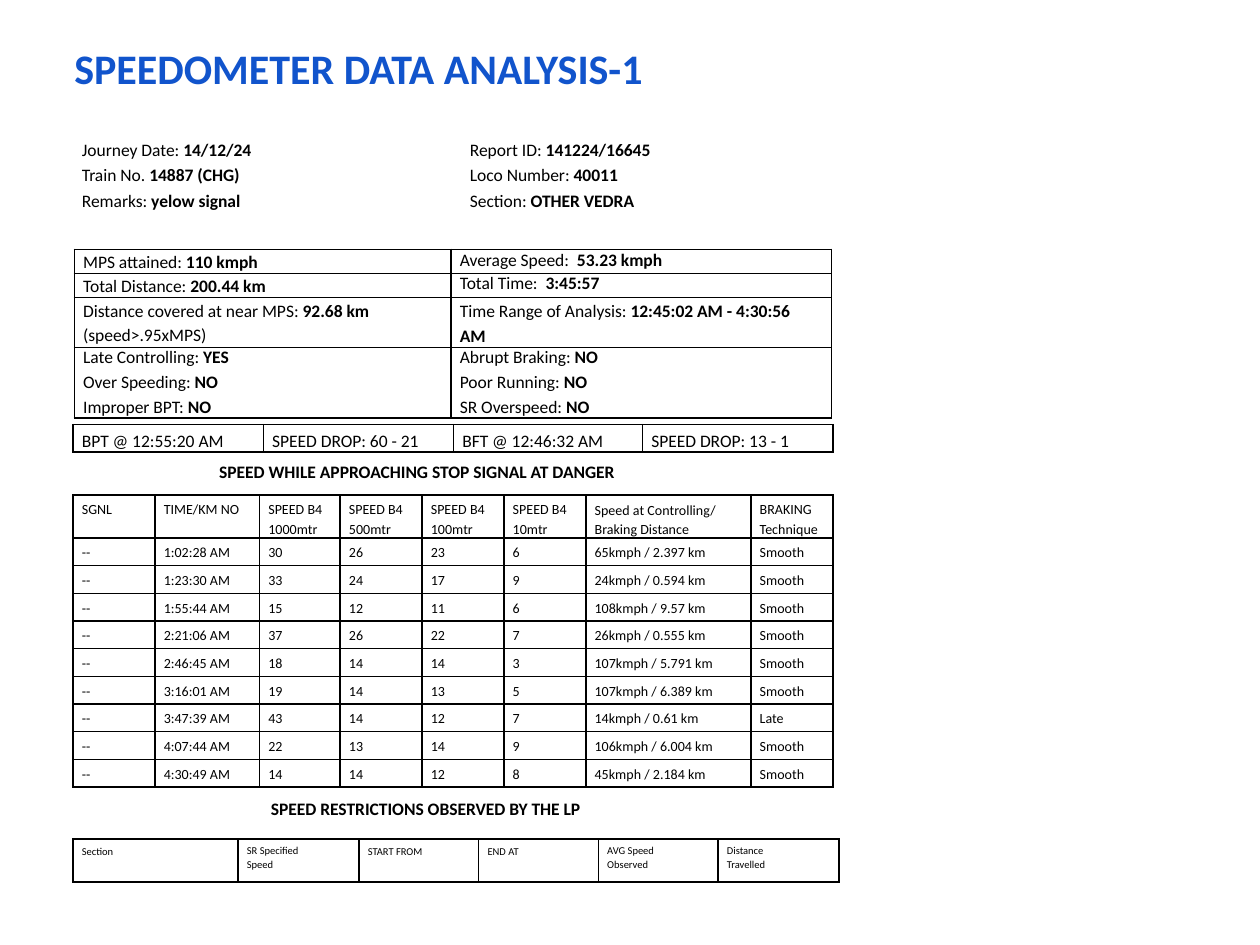
"""Build the speedometer data analysis slide on a grid of 1000 columns by 750 rows."""
from dataclasses import dataclass

import lxml.etree
import pptx
import pptx.dml.color
import pptx.enum.text
import pptx.oxml.ns
import pptx.util

FONT = "Calibri"
BLACK = "000000"
BLUE = "1154CC"
GRID = pptx.util.Inches(10) // 1000


@dataclass(frozen=True)
class Box:
    """A rectangle in grid columns and rows."""
    left: int
    top: int
    width: int
    height: int

    def lengths(self) -> list[int]:
        """Return the rectangle as slide lengths."""
        return [GRID * n for n in (self.left, self.top, self.width, self.height)]


@dataclass(frozen=True)
class Cell:
    """Cell text, with bold parts between asterisks, and its spacing."""
    text: str
    top: int = 5
    gap: float = 1.5
    line: float | None = None


@dataclass(frozen=True)
class Grid:
    """A bordered table with its column widths and row heights in grid units."""
    left: int
    top: int
    columns: list[int]
    rows: list[int]
    cells: list[list[Cell]]
    size: float
    right: int = 0


@dataclass(frozen=True)
class Note:
    """A text box with its spacing in points."""
    box: Box
    text: str
    top: int = 1
    gap: float = 0


def color(value: str) -> pptx.dml.color.RGBColor:
    """Turn a hex string into a colour."""
    return pptx.dml.color.RGBColor.from_string(value)


def write(frame, text: str, size: float, gap: float = 0, line: float | None = None,
          ink: str = BLACK) -> None:
    """Fill a text frame, setting bold the parts between asterisks."""
    for number, content in enumerate(text.split("\n")):
        paragraph = frame.add_paragraph() if number else frame.paragraphs[0]
        paragraph.alignment = pptx.enum.text.PP_ALIGN.LEFT
        paragraph.space_before = pptx.util.Pt(gap if number else 0)
        if line:
            paragraph.line_spacing = line
        paragraph.font.name = FONT
        paragraph.font.size = pptx.util.Pt(size)
        paragraph.font.color.rgb = color(ink)
        for index, part in enumerate(content.split("*")):
            if part:
                run = paragraph.add_run()
                run.text = part
                run.font.bold = index % 2 == 1


def inset(holder, left: int, top: int, right: int = 0) -> None:
    """Set the inner margins of a text frame or cell."""
    holder.margin_left, holder.margin_top = GRID * left, GRID * top
    holder.margin_right, holder.margin_bottom = GRID * right, 0


def add_title(slide, box: Box, text: str) -> None:
    """Place and format the slide title."""
    title = slide.shapes.title
    title.left, title.top, title.width, title.height = box.lengths()
    frame = title.text_frame
    frame.vertical_anchor = pptx.enum.text.MSO_ANCHOR.TOP
    frame.auto_size = pptx.enum.text.MSO_AUTO_SIZE.SHAPE_TO_FIT_TEXT
    inset(frame, 1, 1)
    write(frame, text, 24, ink=BLUE)


def add_note(slide, note: Note) -> None:
    """Draw one text box."""
    frame = slide.shapes.add_textbox(*note.box.lengths()).text_frame
    frame.word_wrap = True
    frame.auto_size = pptx.enum.text.MSO_AUTO_SIZE.SHAPE_TO_FIT_TEXT
    inset(frame, 1, note.top)
    write(frame, note.text, 10, note.gap)


def add_borders(cell) -> None:
    """Give a cell a thin black line on every side."""
    properties = cell._tc.get_or_add_tcPr()
    for position, side in enumerate(("a:lnL", "a:lnR", "a:lnT", "a:lnB")):
        border = lxml.etree.Element(pptx.oxml.ns.qn(side), w=str(pptx.util.Pt(1)))
        fill = lxml.etree.SubElement(border, pptx.oxml.ns.qn("a:solidFill"))
        lxml.etree.SubElement(fill, pptx.oxml.ns.qn("a:srgbClr"), val=BLACK)
        properties.insert(position, border)


def add_grid(slide, grid: Grid) -> None:
    """Draw one bordered table."""
    box = Box(grid.left, grid.top, sum(grid.columns), sum(grid.rows))
    table = slide.shapes.add_table(len(grid.rows), len(grid.columns), *box.lengths()).table
    table.first_row = table.horz_banding = False
    for column, width in zip(table.columns, grid.columns):
        column.width = GRID * width
    for row, height, contents in zip(table.rows, grid.rows, grid.cells):
        row.height = GRID * height
        for cell, content in zip(row.cells, contents):
            cell.fill.background()
            inset(cell, 7, content.top, grid.right)
            write(cell.text_frame, content.text, grid.size, content.gap, content.line)
            add_borders(cell)


NOTES = [
    Note(Box(64, 105, 259, 62),
         "Journey Date: *14/12/24*\nTrain No. *14887 (CHG)*\nRemarks: *yelow signal*", 5, 2.6),
    Note(Box(372, 105, 200, 62),
         "Report ID: *141224/16645*\nLoco Number: *40011*\nSection: *OTHER VEDRA*", 5, 2.6),
    Note(Box(173, 365, 379, 18), "*SPEED WHILE APPROACHING STOP SIGNAL AT DANGER*"),
    Note(Box(214, 632, 297, 18), "*SPEED RESTRICTIONS OBSERVED BY THE LP*"),
]

SUMMARY = [
    [Cell("MPS attained: *110 kmph*", 2), Cell("Average Speed:  *53.23 kmph*", 0)],
    [Cell("Total Distance: *200.44 km*", 2), Cell("Total Time:  *3:45:57*", 0)],
    [Cell("Distance covered at near MPS: *92.68 km*\n(speed>.95xMPS)", 0, 0, pptx.util.Pt(14)),
     Cell("Time Range of Analysis: *12:45:02 AM - 4:30:56 AM*", 0, 0, pptx.util.Pt(14.3))],
    [Cell("Late Controlling: *YES*\nOver Speeding: *NO*\nImproper BPT: *NO*", 0, 2.1),
     Cell("Abrupt Braking: *NO*\nPoor Running: *NO*\nSR Overspeed: *NO*", 0, 2.1)],
]

TESTS = ["BPT @ 12:55:20 AM", "SPEED DROP: 60 - 21", "BFT @ 12:46:32 AM", "SPEED DROP: 13 - 1"]

SIGNAL_HEADER = [
    Cell("SGNL"), Cell("TIME/KM NO"),
    *(Cell(f"SPEED B4\n{distance}mtr") for distance in (1000, 500, 100, 10)),
    Cell("Speed at Controlling/ Braking Distance", 4, 0, 1.12), Cell("BRAKING\nTechnique"),
]

SIGNALS = [
    ("1:02:28", 30, 26, 23, 6, "65kmph / 2.397", "Smooth"),
    ("1:23:30", 33, 24, 17, 9, "24kmph / 0.594", "Smooth"),
    ("1:55:44", 15, 12, 11, 6, "108kmph / 9.57", "Smooth"),
    ("2:21:06", 37, 26, 22, 7, "26kmph / 0.555", "Smooth"),
    ("2:46:45", 18, 14, 14, 3, "107kmph / 5.791", "Smooth"),
    ("3:16:01", 19, 14, 13, 5, "107kmph / 6.389", "Smooth"),
    ("3:47:39", 43, 14, 12, 7, "14kmph / 0.61", "Late"),
    ("4:07:44", 22, 13, 14, 9, "106kmph / 6.004", "Smooth"),
    ("4:30:49", 14, 14, 12, 8, "45kmph / 2.184", "Smooth"),
]

SIGNAL_ROWS = [
    [Cell(str(value)) for value in ("--", f"{time} AM", *speeds, f"{braking} km", technique)]
    for time, *speeds, braking, technique in SIGNALS
]

RESTRICTIONS = [
    Cell("Section"), Cell("SR Specified Speed", 3, 0, 1.12), Cell("START FROM"), Cell("END AT"),
    Cell("AVG Speed Observed", 3, 0, 1.12), Cell("Distance Travelled", 3, 0, 1.12),
]

GRIDS = [
    Grid(59, 198, [299, 302], [19, 19, 39, 56], SUMMARY, 10, 20),
    Grid(58, 337, [151, 151, 150, 151], [21], [[Cell(test) for test in TESTS]], 10),
    Grid(58, 393, [65, 83, 64, 65, 65, 65, 131, 65], [34] + [22] * len(SIGNALS),
         [SIGNAL_HEADER, *SIGNAL_ROWS], 8),
    Grid(58, 666, [131, 96, 95, 95, 95, 96], [34], [RESTRICTIONS], 6, 40),
]


def main() -> None:
    """Build and save the slide."""
    deck = pptx.Presentation()
    deck.slide_width, deck.slide_height = GRID * 1000, GRID * 750
    slide = deck.slides.add_slide(deck.slide_layouts[5])
    add_title(slide, Box(58, 33, 600, 41), "*SPEEDOMETER DATA ANALYSIS-1*")
    for note in NOTES:
        add_note(slide, note)
    for grid in GRIDS:
        add_grid(slide, grid)
    deck.save("out.pptx")


if __name__ == "__main__":
    main()
